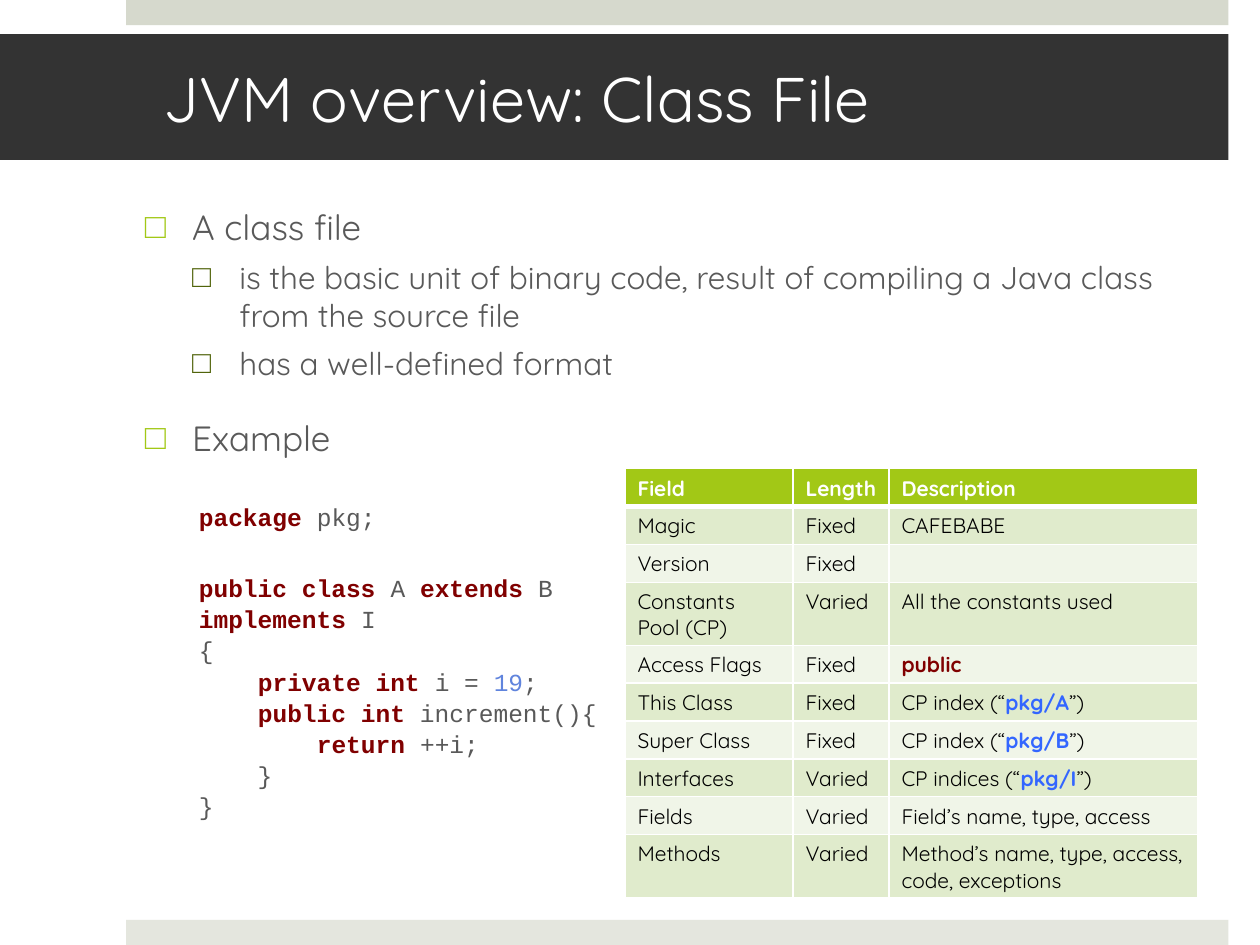
from lxml.etree import SubElement
from pptx import Presentation
from pptx.dml.color import RGBColor
from pptx.enum.shapes import MSO_SHAPE
from pptx.enum.text import MSO_ANCHOR, MSO_AUTO_SIZE, PP_ALIGN
from pptx.oxml.ns import qn
from pptx.util import Pt

COLORS = {
    "white": "FFFFFF", "black": "000000", "dark": "333333", "text": "595959",
    "top bar": "D6D9CD", "bottom bar": "E4E6DE", "green": "A2C816",
    "olive": "51640B", "band": "E0EBCC", "light band": "F0F5E8",
    "keyword": "800000", "number": "6084DD", "constant": "3366FF",
}
BOLD_COLORS = {"keyword", "constant"}
SANS, MONO = "Quicksand", "Courier New"

# Content: a text is a string or a list of (words, color) spans
TITLE = "JVM overview: Class File"
BULLETS = [
    (0, "A class file"),
    (1, "is the basic unit of binary code, result of compiling a Java class "
        "from the source file"),
    (1, "has a well-defined format"),
    (0, "Example"),
]
CODE = [
    ("package ", "keyword"), ("pkg;\n\n", "text"),
    ("public class", "keyword"), (" A ", "text"),
    ("extends ", "keyword"), ("B ", "text"),
    ("implements ", "keyword"), ("I \n{\n    ", "text"),
    ("private int", "keyword"), (" i = ", "text"), ("19", "number"),
    (";\n    ", "text"), ("public int", "keyword"),
    (" increment(){\n        ", "text"), ("return ", "keyword"),
    ("++i;\n    }\n}", "text"),
]


def pool_entry(label, name):
    return [(f"{label} (“", "black"), (name, "constant"), ("”)", "black")]


FIELDS = [
    ("Field", "Length", "Description"),
    ("Magic", "Fixed", "CAFEBABE"),
    ("Version", "Fixed", ""),
    ("Constants Pool (CP)", "Varied", "All the constants used"),
    ("Access Flags", "Fixed", [("public", "keyword")]),
    ("This Class", "Fixed", pool_entry("CP index", "pkg/A")),
    ("Super Class", "Fixed", pool_entry("CP index", "pkg/B")),
    ("Interfaces", "Varied", pool_entry("CP indices", "pkg/I")),
    ("Fields", "Varied", "Field’s name, type, access"),
    ("Methods", "Varied", "Method’s name, type, access, code, exceptions"),
]

# Layout: left, top, width, height in points
BARS = [(72, 0, 630, 14.4, "top bar"), (72, 525.6, 630, 14.4, "bottom bar")]
TITLE_AREA = (0, 19.44, 702, 72)
BODY_AREA = (75.6, 113.76, 626.4, 379.44)
CODE_AREA = (106.56, 282.24, 260.64, 217.44)
TABLE_AREA = (357.12, 267.84, 327.6, 244.8)
COLUMN_WIDTHS = (96, 54.9, 176.7)
MIN_ROW_HEIGHT = 15.84  # rows grow to fit their text
# Per level: left margin, hanging indent, space before, size, bullet color
LEVELS = [(27, 27, 20, 20, "green"), (54, 27, 6, 18, "olive")]


def rgb(name):
    return RGBColor.from_string(COLORS[name])


def paint(shape, color):
    shape.fill.solid()
    shape.fill.fore_color.rgb = rgb(color)


def place(shape, area):
    shape.left, shape.top, shape.width, shape.height = map(Pt, area)


def write(para, text, size, font=SANS, color="text", bold=False):
    """Fill a paragraph with formatted spans; newlines become line breaks."""
    if not text:
        SubElement(para._p, qn("a:endParaRPr"), sz=str(size * 100))
        return
    spans = [(text, color)] if isinstance(text, str) else text
    for words, span_color in spans:
        for number, line in enumerate(words.split("\n")):
            if number:
                para.add_line_break()
            if line:
                span = para.add_run()
                span.text = line
                span.font.size, span.font.name = Pt(size), font
                span.font.bold = bold or span_color in BOLD_COLORS
                span.font.color.rgb = rgb(span_color)


def add_bullet(para, margin, hanging, color):
    props = para._p.get_or_add_pPr()
    props.set("marL", str(Pt(margin)))
    props.set("indent", str(-Pt(hanging)))
    bullet_color = SubElement(props, qn("a:buClr"))
    SubElement(bullet_color, qn("a:srgbClr"), val=COLORS[color])
    SubElement(props, qn("a:buChar"), char="□")


def add_borders(cell, bottom):
    props = cell._tc.get_or_add_tcPr()
    for index, (side, width) in enumerate(
            [("lnL", 1), ("lnR", 1), ("lnT", 1), ("lnB", bottom)]):
        line = props.makeelement(qn(f"a:{side}"), {"w": str(Pt(width))})
        fill = SubElement(line, qn("a:solidFill"))
        SubElement(fill, qn("a:srgbClr"), val=COLORS["white"])
        props.insert(index, line)


def add_bars(page):
    for *area, color in BARS:
        bar = page.shapes.add_shape(MSO_SHAPE.RECTANGLE, *map(Pt, area))
        paint(bar, color)
        bar.line.fill.background()
        bar.shadow.inherit = False


def fill_title(title):
    place(title, TITLE_AREA)
    paint(title, "dark")
    frame = title.text_frame
    frame.auto_size = MSO_AUTO_SIZE.NONE
    frame.vertical_anchor = MSO_ANCHOR.MIDDLE
    frame.margin_left, frame.margin_right = Pt(93.6), Pt(21.6)
    frame.paragraphs[0].alignment = PP_ALIGN.LEFT
    write(frame.paragraphs[0], TITLE, size=36, color="white")


def fill_body(body):
    place(body, BODY_AREA)
    frame = body.text_frame
    frame.auto_size = MSO_AUTO_SIZE.NONE
    for number, (level, text) in enumerate(BULLETS):
        para = frame.add_paragraph() if number else frame.paragraphs[0]
        margin, hanging, before, size, color = LEVELS[level]
        para.level = level
        para.space_before = Pt(before)
        add_bullet(para, margin, hanging, color)
        write(para, text, size=size)


def add_code(page):
    box = page.shapes.add_textbox(*map(Pt, CODE_AREA))
    box.text_frame.word_wrap = True
    para = box.text_frame.paragraphs[0]
    para.space_before = Pt(20)
    para.line_spacing = 1.06
    write(para, CODE, size=14, font=MONO)


def add_field_table(page):
    holder = page.shapes.add_table(
        len(FIELDS), len(COLUMN_WIDTHS), *map(Pt, TABLE_AREA))
    table = holder.table
    for column, width in zip(table.columns, COLUMN_WIDTHS):
        column.width = Pt(width)
    for number, (row, texts) in enumerate(zip(table.rows, FIELDS)):
        row.height = Pt(MIN_ROW_HEIGHT)
        header = number == 0
        band = "green" if header else "band" if number % 2 else "light band"
        for cell, text in zip(row.cells, texts):
            paint(cell, band)
            add_borders(cell, bottom=3 if header else 1)
            write(cell.text_frame.paragraphs[0], text, size=12, bold=header,
                  color="white" if header else "black")
    holder.height = Pt(TABLE_AREA[3])


def main():
    deck = Presentation()
    deck.slide_width, deck.slide_height = Pt(720), Pt(540)
    page = deck.slides.add_slide(deck.slide_layouts[1])
    add_bars(page)
    fill_title(page.shapes.title)
    fill_body(page.placeholders[1])
    add_code(page)
    add_field_table(page)
    deck.save("out.pptx")


if __name__ == "__main__":
    main()
